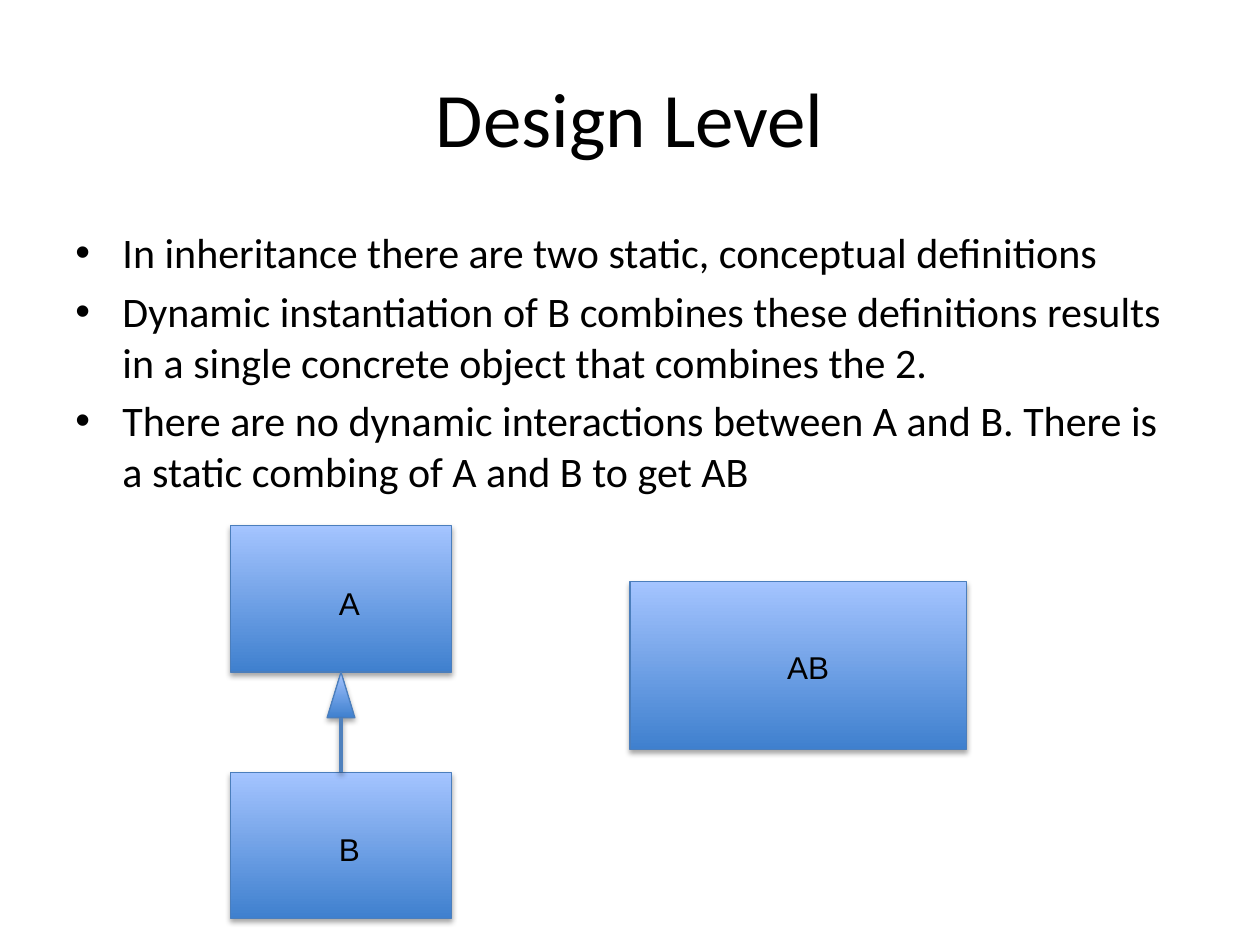
from lxml import etree
from pptx import Presentation
from pptx import util as u
from pptx.dml.color import RGBColor
from pptx.enum import shapes, text
from pptx.oxml.ns import qn

# Content
TITLE = "Design Level"
BULLETS = [
    "In inheritance there are two static, conceptual definitions",
    "Dynamic instantiation of B combines these definitions results "
    "in a single concrete object that combines the 2.",
    "There are no dynamic interactions between A and B. There is "
    "a static combing of A and B to get AB",
]

# Colours
BLACK = RGBColor(0x00, 0x00, 0x00)
DEEP_BLUE = RGBColor(0x3F, 0x80, 0xCE)
PALE_BLUE = RGBColor(0xA4, 0xC4, 0xFF)
OUTLINE = RGBColor(0x4B, 0x7E, 0xBC)
LINE_BLUE = RGBColor(0x4F, 0x81, 0xBD)

# Layout in centimetres
MARGIN = 1.27
CONTENT_WIDTH = 22.86
CLASS_LEFT, CLASS_WIDTH, CLASS_HEIGHT = 4.65, 4.45, 2.95
CLASS_TOPS = {"A": 10.6, "B": 15.57}
CLASS_MIDDLE = CLASS_LEFT + CLASS_WIDTH / 2
HEAD_WIDTH, HEAD_HEIGHT = 0.56, 0.92
INDENT = 0.95


def add_shadow(shape, blur, distance, opacity):
    properties = shape._element.spPr
    effects = properties.find(qn("a:effectLst"))
    if effects is None:
        effects = etree.SubElement(properties, qn("a:effectLst"))
    shadow = etree.SubElement(
        effects, qn("a:outerShdw"), blurRad=str(u.Pt(blur)),
        dist=str(u.Pt(distance)), dir="5400000", rotWithShape="0")
    color = etree.SubElement(shadow, qn("a:srgbClr"), val="000000")
    etree.SubElement(color, qn("a:alpha"), val=str(opacity * 1000))


def add_blue_shape(parent, kind, left, top, width, height):
    shape = parent.add_shape(kind, *map(u.Cm, (left, top, width, height)))
    shape.fill.gradient()
    shape.fill.gradient_angle = 90
    for stop, color in zip(shape.fill.gradient_stops, (DEEP_BLUE, PALE_BLUE)):
        stop.color.rgb = color
    shape.line.color.rgb = OUTLINE
    shape.line.width = u.Pt(0.75)
    shape.shadow.inherit = False
    add_shadow(shape, 3.1, 1.8, 35)
    return shape


def add_text_box(parent, left, top, width, height, wrap=True):
    box = parent.add_textbox(*map(u.Cm, (left, top, width, height)))
    box.text_frame.word_wrap = wrap
    return box.text_frame


def add_run(paragraph, content, font, size):
    run = paragraph.add_run()
    run.text = content
    run.font.name = font
    run.font.size = u.Pt(size)
    run.font.color.rgb = BLACK


def add_label(parent, content, left, top, width, height):
    frame = add_text_box(parent, left, top, width, height, wrap=False)
    frame.margin_right = 0
    add_run(frame.paragraphs[0], content, "Arial", 18)


def add_bullet(paragraph):
    properties = paragraph._p.get_or_add_pPr()
    properties.set("marL", str(u.Cm(INDENT)))
    properties.set("indent", str(-u.Cm(INDENT)))
    etree.SubElement(properties, qn("a:buFont"), typeface="Arial")
    etree.SubElement(properties, qn("a:buChar"), char="•")


presentation = Presentation()
presentation.slide_width = u.Cm(25.4)
presentation.slide_height = u.Cm(19.05)
slide = presentation.slides.add_slide(presentation.slide_layouts[6])

# Title
frame = add_text_box(slide.shapes, MARGIN, 0.76, CONTENT_WIDTH, 3.18)
frame.vertical_anchor = text.MSO_ANCHOR.MIDDLE
frame.paragraphs[0].alignment = text.PP_ALIGN.CENTER
add_run(frame.paragraphs[0], TITLE, "Calibri", 44)

# Bullets
frame = add_text_box(slide.shapes, MARGIN, 4.45, CONTENT_WIDTH, 12.57)
for index, bullet in enumerate(BULLETS):
    paragraph = frame.add_paragraph() if index else frame.paragraphs[0]
    add_bullet(paragraph)
    if index:
        paragraph.space_before = u.Pt(4.8)
    add_run(paragraph, bullet, "Calibri", 24)

# Inheritance diagram: B points up to A
diagram = slide.shapes.add_group_shape().shapes
boxes = {
    name: add_blue_shape(diagram, shapes.MSO_SHAPE.RECTANGLE,
                         CLASS_LEFT, top, CLASS_WIDTH, CLASS_HEIGHT)
    for name, top in CLASS_TOPS.items()
}
head_top = CLASS_TOPS["A"] + CLASS_HEIGHT
head_bottom = head_top + HEAD_HEIGHT
add_blue_shape(diagram, shapes.MSO_SHAPE.ISOSCELES_TRIANGLE,
               CLASS_MIDDLE - HEAD_WIDTH / 2, head_top, HEAD_WIDTH, HEAD_HEIGHT)
stem = diagram.add_connector(
    shapes.MSO_CONNECTOR.STRAIGHT, u.Cm(CLASS_MIDDLE), u.Cm(head_bottom),
    u.Cm(CLASS_MIDDLE), u.Cm(CLASS_TOPS["B"]))
stem.end_connect(boxes["B"], 0)
stem.line.color.rgb = LINE_BLUE
stem.line.width = u.Pt(2)
add_shadow(stem, 3.1, 1.6, 38)
for name, top in CLASS_TOPS.items():
    add_label(diagram, name, 6.58, top + 1.04, 0.61, 0.89)

# Combined object
add_blue_shape(slide.shapes, shapes.MSO_SHAPE.RECTANGLE, 12.7, 11.73, 6.78, 3.38)
add_label(slide.shapes, "AB", 15.62, 12.93, 1.37, 1.02)

presentation.save("out.pptx")
